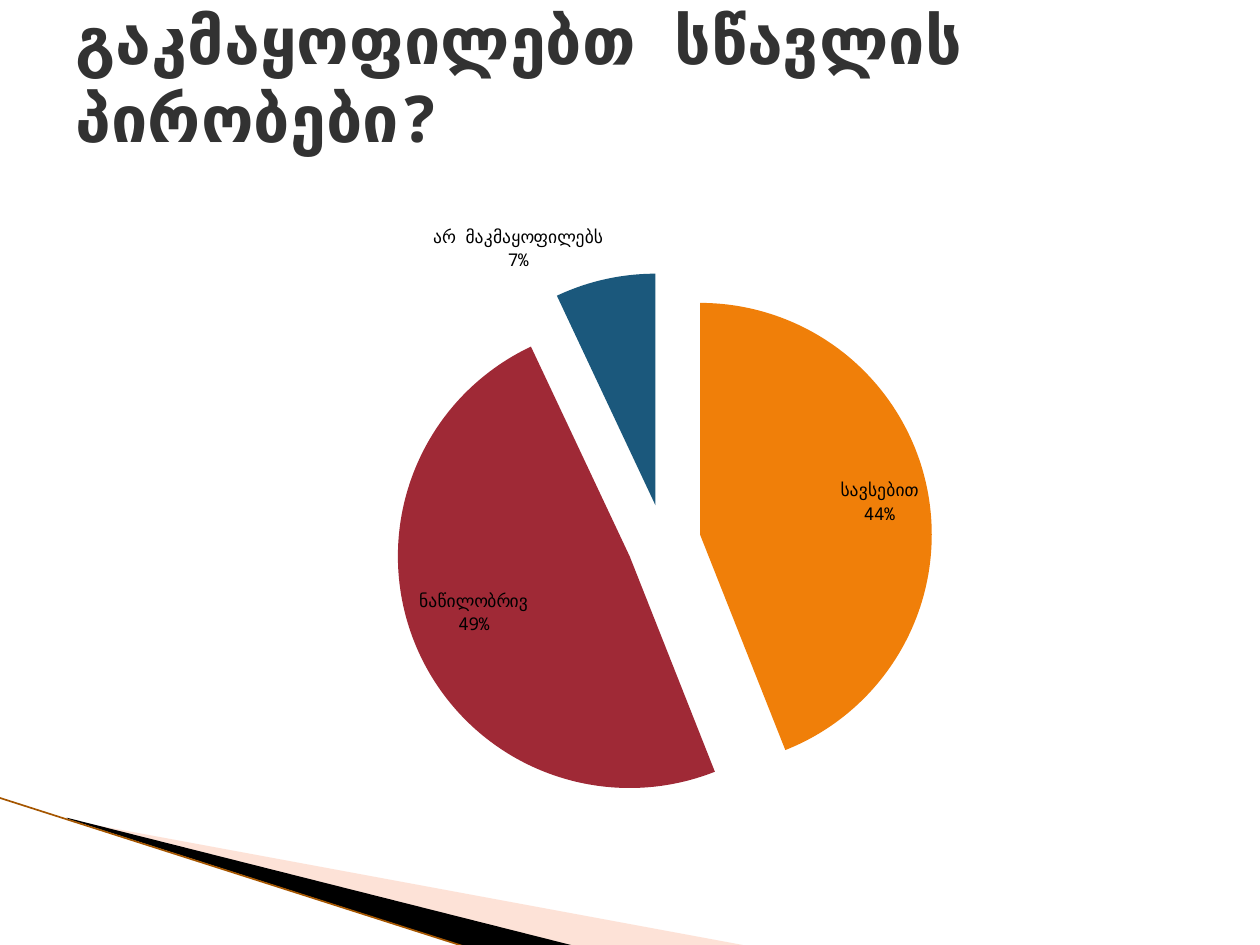
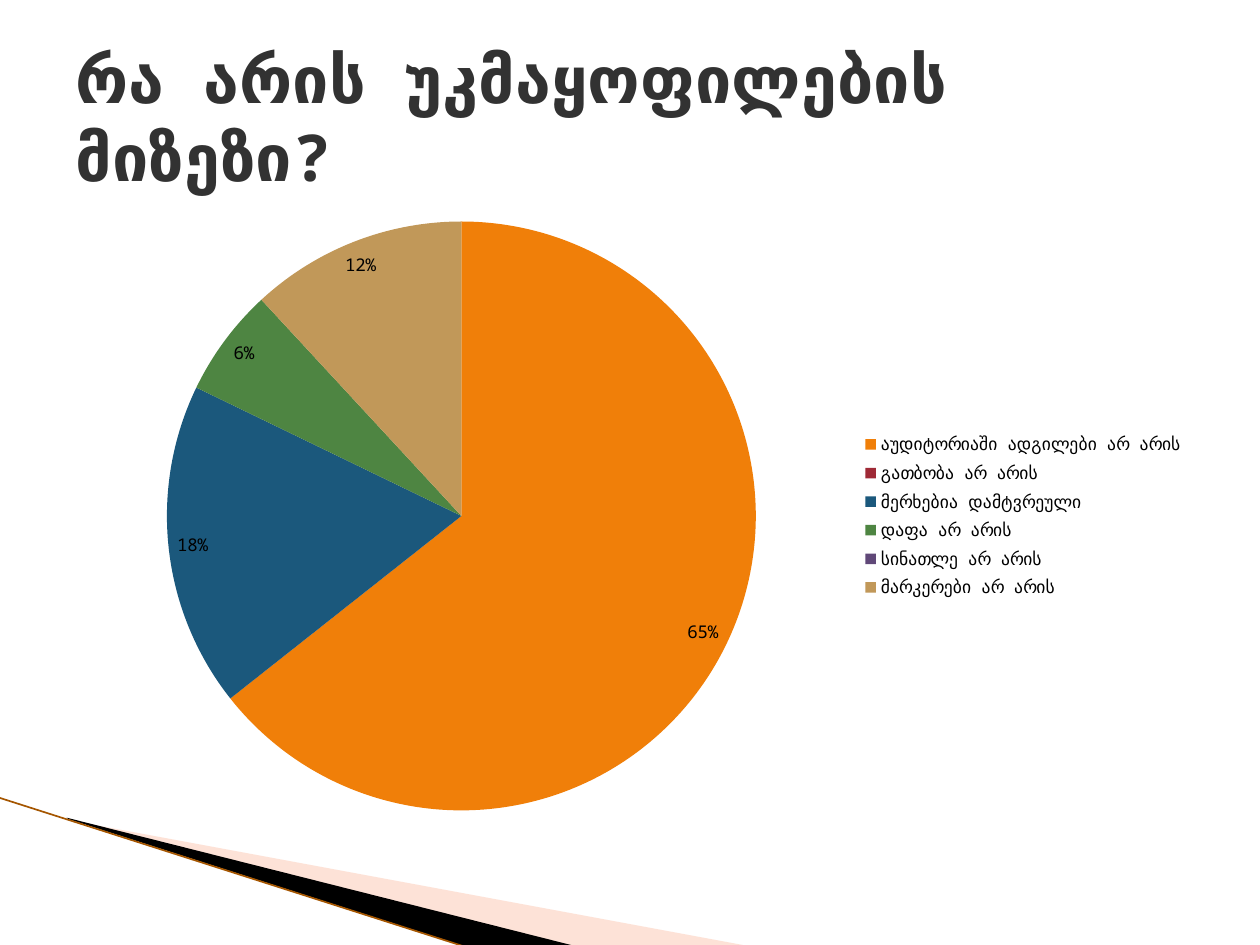
from lxml.etree import SubElement as Sub
from pptx import Presentation
from pptx.chart.data import CategoryChartData as Data
from pptx.dml.color import RGBColor
from pptx.enum.chart import XL_CHART_TYPE as Kind
from pptx.enum.chart import XL_LABEL_POSITION as Place
from pptx.enum.chart import XL_LEGEND_POSITION as Side
from pptx.enum.shapes import MSO_CONNECTOR as Link
from pptx.enum.text import MSO_ANCHOR as Anchor
from pptx.enum.text import MSO_AUTO_SIZE as Fit
from pptx.enum.text import PP_ALIGN as Align
from pptx.oxml import parse_xml
from pptx.oxml.ns import nsdecls, qn
from pptx.util import Inches, Pt

# Shared look
FONT = "Noto Sans Mono"
INK = RGBColor(0x32, 0x32, 0x32)
BLACK = RGBColor(0, 0, 0)
PEACH = RGBColor(0xFC, 0xB7, 0x9B)
BROWN = RGBColor(0xA5, 0x56, 0x00)
SLICES = [
    RGBColor(0xF0, 0x7F, 0x09), RGBColor(0x9F, 0x29, 0x36),
    RGBColor(0x1B, 0x58, 0x7C), RGBColor(0x4E, 0x85, 0x42),
    RGBColor(0x60, 0x48, 0x78), RGBColor(0xC1, 0x98, 0x59),
]
HEAD = {"name": FONT, "size": Pt(36.9), "bold": True}
SMALL = {"name": FONT, "size": Pt(10), "bold": False}


def style(font, form, color):
    for key, value in form.items():
        setattr(font, key, value)
    font.color.rgb = color


def add_wedge(slide, points, color, alpha=100):
    spots = [(Inches(x), Inches(y)) for x, y in points]
    pen = slide.shapes.build_freeform(*spots[0])
    pen.add_line_segments(spots[1:], close=True)
    wedge = pen.convert_to_shape()
    wedge.shadow.inherit = False
    wedge.fill.solid()
    wedge.fill.fore_color.rgb = color
    wedge.line.fill.background()
    if alpha < 100:
        tint = wedge.element.spPr.find(".//" + qn("a:srgbClr"))
        Sub(tint, qn("a:alpha"), val=str(alpha * 1000))
    return wedge


def add_edge(slide, start, end):
    ends = [Inches(n) for n in (*start, *end)]
    edge = slide.shapes.add_connector(Link.STRAIGHT, *ends)
    edge.line.color.rgb = BROWN
    edge.line.width = Pt(0.95)
    Sub(edge.element.spPr, qn("a:effectLst"))
    return edge


def share_band(slide, layout):
    """Draw the corner band and move it to the layout, behind the text."""
    band = [
        add_wedge(slide, [(0.55, 6.51), (5.95, 7.51), (4.56, 7.51), (0.55, 6.5)],
                  PEACH, alpha=40),
        add_wedge(slide, [(0.53, 6.49), (4.57, 7.51), (3.72, 7.52), (0.54, 6.5)],
                  BLACK),
        add_edge(slide, (-0.01, 6.33), (3.71, 7.52)),
    ]
    for index, part in enumerate(band, start=2):
        layout.shapes._spTree.insert(index, part.element)


def set_title(slide, text, lift=0):
    title = slide.shapes.title
    title.left, title.top = Inches(0.5), Inches(0.3)
    title.width, title.height = Inches(9), Inches(1.25)
    frame = title.text_frame
    frame.text = text
    frame.word_wrap = True
    frame.auto_size = Fit.NONE
    frame.vertical_anchor = Anchor.MIDDLE
    frame.margin_bottom = Inches(0.05 + 2 * lift)
    line = frame.paragraphs[0]
    line.alignment = Align.LEFT
    style(line.font, HEAD, INK)


def add_pie(slide, shares, show, code, legend=False, burst=0):
    data = Data()
    data.categories = list(shares)
    data.add_series("Series 1", list(shares.values()))
    box = [Inches(n) for n in (0.5, 1.62, 9, 4.95)]
    chart = slide.shapes.add_chart(Kind.PIE, *box, data).chart
    chart.has_title = False
    style(chart.font, SMALL, BLACK)
    chart.has_legend = legend
    if legend:
        chart.legend.position = Side.RIGHT
        chart.legend.include_in_layout = False
        style(chart.legend.font, SMALL, BLACK)

    # Slices
    plot = chart.plots[0]
    plot.vary_by_categories = True
    series = plot.series[0]
    for index, color in enumerate(SLICES[:len(shares)]):
        piece = series.points[index].format
        piece.fill.solid()
        piece.fill.fore_color.rgb = color
        piece.line.fill.background()
    if burst:
        first = series._element.find(qn("c:dPt"))
        first.addprevious(parse_xml(
            f'<c:explosion {nsdecls("c")} val="{burst}"/>'))

    # Labels
    plot.has_data_labels = True
    labels = plot.data_labels
    form = {"show_value": False, "show_percentage": False,
            "number_format": code, "number_format_is_linked": False,
            "position": Place.BEST_FIT}
    form.update(dict.fromkeys(show, True))
    for key, value in form.items():
        setattr(labels, key, value)
    style(labels.font, SMALL, BLACK)
    mark = labels._element.find(qn("c:showBubbleSize"))
    if mark is not None:
        mark.addnext(parse_xml(
            f'<c:separator {nsdecls("c")}>\n</c:separator>'))


def main():
    deck = Presentation()
    deck.slide_width, deck.slide_height = Inches(10), Inches(7.5)
    layout = deck.slide_layouts[5]

    # Satisfaction
    slide = deck.slides.add_slide(layout)
    share_band(slide, layout)
    set_title(slide, "გაკმაყოფილებთ სწავლის პირობები?", lift=0.31)
    rates = {"სავსებით": 44, "ნაწილობრივ": 49, "არ მაკმაყოფილებს": 7}
    add_pie(slide, rates, ["show_percentage", "show_category_name"], "0%",
            burst=16)

    # Reasons
    slide = deck.slides.add_slide(layout)
    set_title(slide, "რა არის უკმაყოფილების მიზეზი?")
    causes = {
        "აუდიტორიაში ადგილები არ არის": 65,
        "გათბობა არ არის": 0,
        "მერხებია დამტვრეული": 18,
        "დაფა არ არის": 6,
        "სინათლე არ არის": 0,
        "მარკერები არ არის": 12,
    }
    add_pie(slide, causes, ["show_value"], '0"%";;', legend=True)

    deck.save("out.pptx")


if __name__ == "__main__":
    main()
